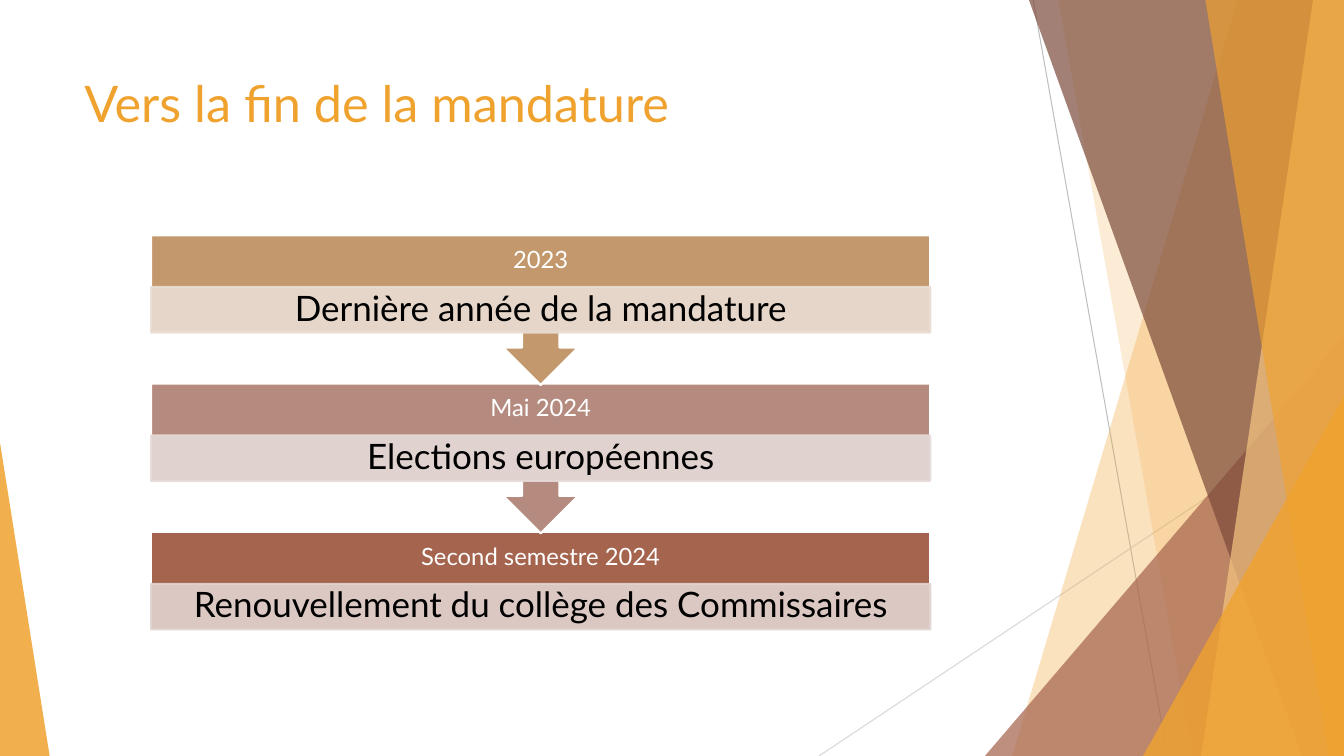
"""Build the slide on the last steps of the mandate, with its faceted side decoration."""
from lxml import etree
from pptx import Presentation
from pptx.dml.color import RGBColor
from pptx.enum import shapes, text
from pptx.oxml import ns
from pptx.util import Pt

FONT = "Lato"
WHITE = RGBColor(0xFF, 0xFF, 0xFF)
BLACK = RGBColor(0x00, 0x00, 0x00)
ORANGE = RGBColor(0xF0, 0xA2, 0x2E)
PALE_ORANGE = RGBColor(0xF6, 0xC7, 0x82)
RUST = RGBColor(0xA5, 0x64, 0x4E)
BROWN = RGBColor(0x7C, 0x4B, 0x3B)
TAN = RGBColor(0xC3, 0x98, 0x6D)
ROSE = RGBColor(0xB5, 0x8B, 0x80)
PALE_TAN = RGBColor(0xE9, 0xDD, 0xD4)
PALE_ROSE = RGBColor(0xE5, 0xDA, 0xD8)
PALE_RUST = RGBColor(0xE1, 0xD3, 0xD0)
GREY = RGBColor(0xBF, 0xBF, 0xBF)
LIGHT_GREY = RGBColor(0xD9, 0xD9, 0xD9)
WIDTH, HEIGHT = 960, 540


def paint(sp, fill, line=None, opacity=100):
    sp.shadow.inherit = False
    sp.fill.solid()
    sp.fill.fore_color.rgb = fill
    if line is None:
        sp.line.fill.background()
    else:
        sp.line.color.rgb = line
        sp.line.width = Pt(1.5)
    if opacity < 100:
        for color in sp._element.spPr.iter(ns.qn("a:srgbClr")):
            etree.SubElement(color, ns.qn("a:alpha")).set("val", str(opacity * 1000))


def write(sp, words, size, color, insets):
    tf = sp.text_frame
    tf.word_wrap = True
    tf.vertical_anchor = text.MSO_ANCHOR.MIDDLE
    tf.margin_left, tf.margin_top, tf.margin_right, tf.margin_bottom = map(Pt, insets)
    tf.text = words
    p = tf.paragraphs[0]
    p.alignment = text.PP_ALIGN.CENTER
    p.line_spacing = 0.9
    font = p.runs[0].font
    font.name, font.size, font.color.rgb = FONT, Pt(size), color


prs = Presentation()
prs.slide_width, prs.slide_height = Pt(WIDTH), Pt(HEIGHT)
s = prs.slides.add_slide(prs.slide_layouts[5])

rays = [(738, 0, 834, HEIGHT, GREY), (WIDTH, 290, 585, HEIGHT, LIGHT_GREY)]
for x1, y1, x2, y2, color in rays:
    ray = s.shapes.add_connector(shapes.MSO_CONNECTOR.STRAIGHT, Pt(x1), Pt(y1), Pt(x2), Pt(y2))
    ray.line.color.rgb = color
    ray.line.width = Pt(0.75)
    etree.SubElement(ray._element.spPr, ns.qn("a:effectLst"))

# Facets run to the right edge (top x, bottom x); triangles stand on the bottom (left, top, width, apex).
decorations = [
    ((884, 723), ORANGE, 30),
    ((756, 852), ORANGE, 20),
    ((703.5, 240, 256.5, 1), RUST, 72),
    ((735, 930), BROWN, 70),
    ((938, 858), PALE_ORANGE, 70),
    ((861, 949), ORANGE, 65),
    ((816.5, 283, 143.5, 1), ORANGE, 80),
    ((0, 316, 35.5, 0), ORANGE, 85),
]
for outline, color, opacity in decorations:
    if len(outline) == 2:
        top_x, bottom_x = outline
        facet = s.shapes.build_freeform(top_x, 0, scale=Pt(1))
        facet.add_line_segments([(WIDTH, 0), (WIDTH, HEIGHT), (bottom_x, HEIGHT)], close=True)
        sp = facet.convert_to_shape()
    else:
        left, top, width, apex = outline
        sp = s.shapes.add_shape(shapes.MSO_SHAPE.ISOSCELES_TRIANGLE,
                                Pt(left), Pt(top), Pt(width), Pt(HEIGHT - top))
        sp.adjustments[0] = apex
    paint(sp, color, opacity=opacity)

title = s.shapes.title
title.left, title.top, title.width, title.height = Pt(53), Pt(48), Pt(677), Pt(104)
tf = title.text_frame
tf.text = "Vers la fin de la mandature"
tf.vertical_anchor = text.MSO_ANCHOR.TOP
p = tf.paragraphs[0]
p.alignment = text.PP_ALIGN.LEFT
font = p.runs[0].font
font.name, font.size, font.color.rgb = FONT, Pt(36), ORANGE

steps = [
    ("2023", "Dernière année de la mandature", TAN, PALE_TAN),
    ("Mai 2024", "Elections européennes", ROSE, PALE_ROSE),
    ("Second semestre 2024", "Renouvellement du collège des Commissaires", RUST, PALE_RUST),
]
STEP_LEFT, STEP_TOP, STEP_WIDTH, STEP_PITCH = 108, 168, 556.5, 106
for i, (date, event, color, pale) in reversed(list(enumerate(steps))):
    y = STEP_TOP + i * STEP_PITCH
    if i == len(steps) - 1:
        kind, height = shapes.MSO_SHAPE.RECTANGLE, 70
    else:
        kind, height = shapes.MSO_SHAPE.DOWN_ARROW_CALLOUT, 107
    header = s.shapes.add_shape(kind, Pt(STEP_LEFT), Pt(y), Pt(STEP_WIDTH), Pt(height))
    paint(header, color, WHITE)
    write(header, date, 17, WHITE, (9, 9, 9, 42))
    detail = s.shapes.add_shape(shapes.MSO_SHAPE.RECTANGLE,
                                Pt(STEP_LEFT), Pt(y + 37), Pt(STEP_WIDTH), Pt(32.5))
    paint(detail, pale, pale, 90)
    write(detail, event, 25, BLACK, (13.5, 2, 13.5, 2))

prs.save("out.pptx")
